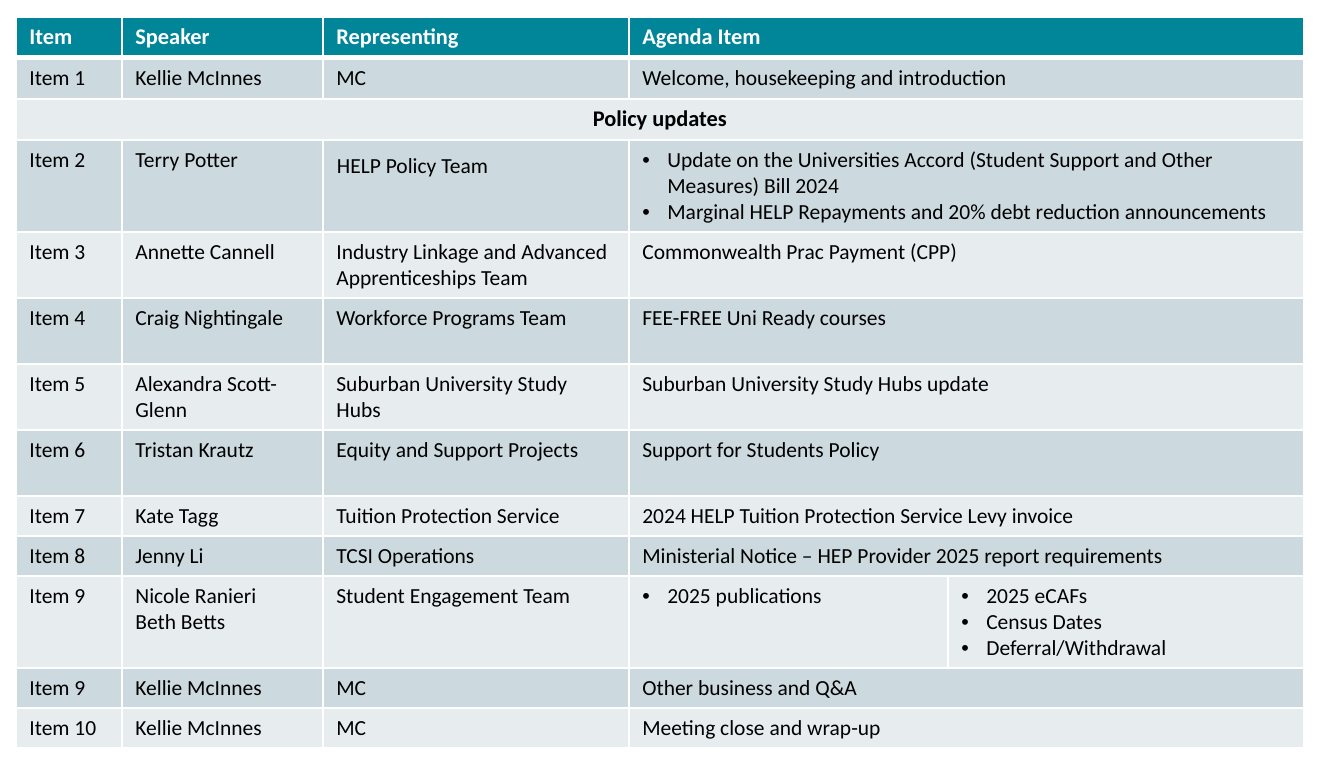
"""Build a one-slide meeting agenda table."""
from dataclasses import dataclass

from lxml import etree
from pptx import Presentation
from pptx.dml.color import RGBColor
from pptx.enum.text import PP_ALIGN
from pptx.oxml.ns import qn
from pptx.table import Table, _Cell
from pptx.util import Inches, Pt

CENTER = PP_ALIGN.CENTER
SCALE = 914400 / 134.4
COLORS = {"head": "008599", "dark": "CCD9DE", "light": "E7EDEF",
          "white": "FFFFFF", "black": "000000"}
WIDTHS = (106, 201, 306, 319, 356)
LEFT, TOP = 16, 17
INDENT = 25
AGENDA = 3


@dataclass(frozen=True)
class Row:
    height: int
    texts: tuple[str, ...]
    dots: bool = False
    bold: bool = False


ROWS = (
    Row(41, ("Item", "Speaker", "Representing", "Agenda Item"), bold=True),
    Row(41, ("Item 1", "Kellie McInnes", "MC", "Welcome, housekeeping and introduction")),
    Row(41, ("Policy updates",), bold=True),
    Row(92, ("Item 2", "Terry Potter", "HELP Policy Team",
             "Update on the Universities Accord (Student Support and Other Measures) Bill 2024\n"
             "Marginal HELP Repayments and 20% debt reduction announcements"), dots=True),
    Row(66, ("Item 3", "Annette Cannell", "Industry Linkage and Advanced Apprenticeships Team",
             "Commonwealth Prac Payment (CPP)")),
    Row(66, ("Item 4", "Craig Nightingale", "Workforce Programs Team",
             "FEE-FREE Uni Ready courses")),
    Row(66, ("Item 5", "Alexandra Scott-Glenn", "Suburban University Study Hubs",
             "Suburban University Study Hubs update")),
    Row(66, ("Item 6", "Tristan Krautz", "Equity and Support Projects",
             "Support for Students Policy")),
    Row(40, ("Item 7", "Kate Tagg", "Tuition Protection Service",
             "2024 HELP Tuition Protection Service Levy invoice")),
    Row(40, ("Item 8", "Jenny Li", "TCSI Operations",
             "Ministerial Notice – HEP Provider 2025 report requirements")),
    Row(92, ("Item 9", "Nicole Ranieri\nBeth Betts", "Student Engagement Team",
             "2025 publications", "2025 eCAFs\nCensus Dates\nDeferral/Withdrawal"), dots=True),
    Row(40, ("Item 9", "Kellie McInnes", "MC", "Other business and Q&A")),
    Row(40, ("Item 10", "Kellie McInnes", "MC", "Meeting close and wrap-up")),
)


def emu(px: int) -> int:
    return round(px * SCALE)


def paint(cell: _Cell, fill: str, top: int, bottom: int) -> None:
    props = cell._tc.get_or_add_tcPr()
    for side, width in (("L", 1), ("R", 1), ("T", top), ("B", bottom)):
        line = etree.SubElement(props, qn(f"a:ln{side}"), w=str(Pt(width)))
        solid = etree.SubElement(line, qn("a:solidFill"))
        etree.SubElement(solid, qn("a:srgbClr"), val=COLORS["white"])
    cell.fill.solid()
    cell.fill.fore_color.rgb = RGBColor.from_string(COLORS[fill])


def write(cell: _Cell, text: str, size: float, color: str, bold: bool, dots: bool) -> None:
    cell.text_frame.text = text
    for para in cell.text_frame.paragraphs:
        if dots:
            props = para._p.get_or_add_pPr()
            props.set("marL", str(emu(INDENT)))
            props.set("indent", str(-emu(INDENT)))
            etree.SubElement(props, qn("a:buFont"), typeface="Arial")
            etree.SubElement(props, qn("a:buChar"), char="•")
        for run in para.runs:
            run.font.name = "Calibri"
            run.font.size = Pt(size)
            run.font.bold = bold
            run.font.color.rgb = RGBColor.from_string(COLORS[color])


def draw(table: Table, index: int, row: Row) -> None:
    fill = "head" if index == 0 else "dark" if index % 2 else "light"
    color = "white" if index == 0 else "black"
    table.rows[index].height = emu(row.height)
    for cell in table.rows[index].cells:
        paint(cell, fill, 3 if index == 1 else 1, 3 if index == 0 else 1)
    last = len(row.texts) - 1
    if last < len(WIDTHS) - 1:
        table.cell(index, last).merge(table.cell(index, len(WIDTHS) - 1))
    for col, text in enumerate(row.texts):
        write(table.cell(index, col), text, 12 if row.bold else 11.5, color,
              row.bold, row.dots and col >= AGENDA)


def main() -> None:
    deck = Presentation()
    deck.slide_width, deck.slide_height = Inches(10), Inches(5.63)
    slide = deck.slides.add_slide(deck.slide_layouts[6])
    frame = slide.shapes.add_table(len(ROWS), len(WIDTHS), emu(LEFT), emu(TOP),
                                   emu(sum(WIDTHS)), emu(sum(row.height for row in ROWS)))
    table = frame.table
    for col, width in zip(table.columns, WIDTHS):
        col.width = emu(width)
    for index, row in enumerate(ROWS):
        draw(table, index, row)
    table.cell(2, 0).text_frame.paragraphs[0].alignment = CENTER
    team = table.cell(3, 2)
    team.margin_left, team.margin_right = emu(14), emu(9)
    team.margin_top = team.margin_bottom = 0
    team.text_frame.paragraphs[0].line_spacing = 1.5
    deck.save("out.pptx")


if __name__ == "__main__":
    main()
